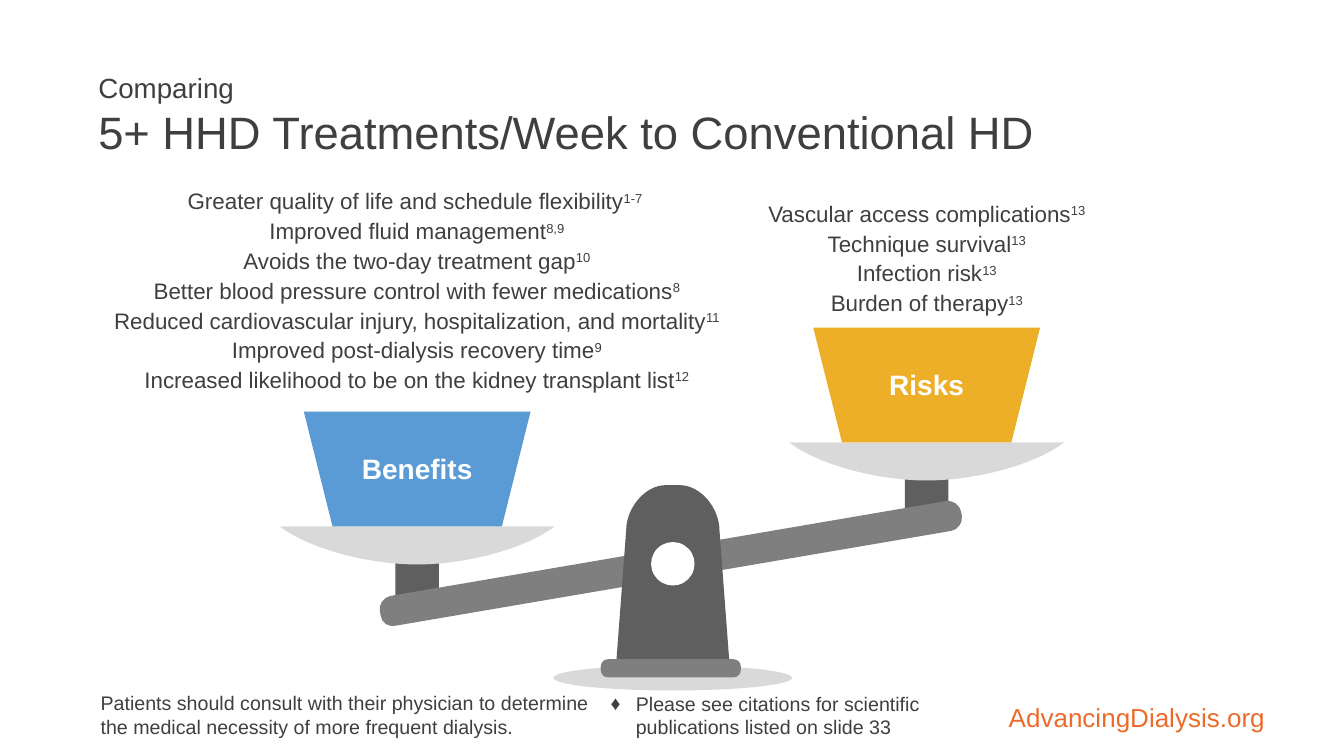
from lxml.etree import SubElement
from pptx import Presentation
from pptx.dml.color import RGBColor
from pptx.enum.shapes import MSO_SHAPE
from pptx.enum.text import MSO_ANCHOR, MSO_AUTO_SIZE, PP_ALIGN
from pptx.oxml.ns import qn
from pptx.util import Pt

COLORS = {"text": "3F3F3F", "white": "FFFFFF", "orange": "ED6B2A",
          "blue": "5B9BD5", "gold": "EDAE28", "dark": "5F5F5F",
          "beam": "7F7F7F", "pale": "D9D9D9"}


def add_part(color, outline, preset=None, shift=(0, 0)):
    """Add a flat shape: a preset in a box, or a path of line (2) and cubic (6) steps."""
    if preset is not None:
        part = shapes.add_shape(preset, *map(Pt, outline))
    else:
        points = [(Pt(step[i] + shift[0]), Pt(step[i + 1] + shift[1]))
                  for step in outline for i in range(0, len(step), 2)]
        builder = shapes.build_freeform(*points[0])
        builder.add_line_segments(points[1:])
        part = builder.convert_to_shape()
        segments = iter(list(part._element.iter(qn("a:lnTo"))))
        for step in outline[1:]:
            segment = next(segments)
            if len(step) == 6:
                segment.tag = qn("a:cubicBezTo")
                for _ in range(2):
                    extra = next(segments)
                    segment.append(extra[0])
                    extra.getparent().remove(extra)
    part.shadow.inherit = False
    part.fill.solid()
    part.fill.fore_color.rgb = RGBColor.from_string(COLORS[color])
    part.line.fill.background()
    return part


def write(shape, place, lines, size, color="text", align=PP_ALIGN.LEFT,
          anchor=MSO_ANCHOR.TOP, margins=(7.2, 3.6), spacing=1.0, after=0, bold=False):
    """Place a text holder and fill it; each line is a pair of text and superscript."""
    shape.left, shape.top, shape.width, shape.height = map(Pt, place)
    frame = shape.text_frame
    frame.word_wrap = True
    frame.auto_size = MSO_AUTO_SIZE.NONE
    frame.vertical_anchor = anchor
    frame.margin_left = frame.margin_right = Pt(margins[0])
    frame.margin_top = frame.margin_bottom = Pt(margins[1])
    for index, line in enumerate(lines):
        para = frame.add_paragraph() if index else frame.paragraphs[0]
        para.alignment = align
        para.line_spacing = spacing
        para.space_after = Pt(after)
        for raised, words in enumerate(line):
            span = para.add_run()
            span.text = words
            span.font.name = "Arial"
            span.font.size = Pt(size)
            span.font.bold = bold
            span.font.color.rgb = RGBColor.from_string(COLORS[color])
            if raised:
                span.font._element.set("baseline", "30000")


deck = Presentation()
deck.slide_width, deck.slide_height = Pt(960), Pt(540)
page = deck.slides.add_slide(deck.slide_layouts[5])
shapes = page.shapes

# Title: small lead-in above the main line
title = shapes.title
write(title, (65.2, 59, 829.4, 45.4), [["Comparing "]], 19.8,
      anchor=MSO_ANCHOR.MIDDLE, margins=(5, 2.9))
heading = title.text_frame.paragraphs[0]
heading.add_line_break()
span = heading.add_run()
span.text = "5+ HHD Treatments/Week to Conventional HD"
span.font.name = "Arial"
span.font.size = Pt(32.4)
span.font.color.rgb = RGBColor.from_string(COLORS["text"])

# Two pans: label, colour, centre x, rim y, list place, list lines
pans = [
    ("Benefits", "blue", 298, 376, (76.3, 104.6, 442.8, 176.4), [
        ("Greater quality of life and schedule flexibility", "1-7 "),
        ("Improved fluid management", "8,9"),
        ("Avoids the two-day treatment gap", "10"),
        ("Better blood pressure control with fewer medications", "8"),
        ("Reduced cardiovascular injury, hospitalization, and mortality", "11"),
        ("Improved post-dialysis recovery time", "9"),
        ("Increased likelihood to be on the kidney transplant list", "12")]),
    ("Risks", "gold", 661.9, 316, (529.9, 133.9, 264.2, 92.2), [
        ("Vascular access\u00a0complications", "13"),
        ("Technique survival", "13"),
        ("Infection risk", "13"),
        ("Burden of therapy", "13")]),
]
DISH = [(-98.2, 0), (-76.6, 16.5, -34, 27.2, 0, 27.2), (34, 27.2, 76.6, 16.5, 98.2, 0)]

for label, color, center, rim, place, lines in pans:
    write(shapes.add_textbox(0, 0, 0, 0), place, lines, 16, align=PP_ALIGN.CENTER,
          anchor=MSO_ANCHOR.BOTTOM, margins=(0, 0), spacing=0.9, after=4)
    add_part("dark", (center - 15.6, rim + 15.7, 31.2, 34.5), MSO_SHAPE.RECTANGLE)
    add_part("pale", DISH, shift=(center, rim))
    weight = add_part(color, (center - 81, rim - 82, 162, 82), MSO_SHAPE.TRAPEZOID)
    weight.rotation = 180

# Beam and stand
BEAM = [(277.9, 390.2), (680.4, 393.1),
        (685.4, 393.1, 689.8, 397.4, 689.8, 402.5), (689.8, 405.4),
        (689.8, 410.4, 685.4, 414.7, 680.4, 414.7), (277.9, 411.8),
        (272.2, 411.8, 268.6, 408.2, 268.6, 403.2), (268.6, 399.6),
        (268.6, 394.6, 272.9, 390.2, 277.9, 390.2)]
PILLAR = [(40.6, 475.9), (33.3, 378.7), (33.3, 363.6, 20.5, 346.5, 4.7, 346.5),
          (-4.7, 346.5), (-20.5, 346.5, -33.3, 363.6, -33.3, 378.7), (-40.6, 475.9)]
FOOT = [(434.2, 483.8), (431.3, 483.8, 429.1, 481.7, 429.1, 478.1), (429.1, 476.6),
        (429.1, 473, 431.3, 470.9, 434.2, 470.9), (523.8, 470.9),
        (527, 470.9, 529.2, 473, 529.2, 476.6), (529.2, 478.1),
        (529.2, 481.7, 527, 483.8, 523.8, 483.8)]
beam = add_part("beam", BEAM)
beam.rotation = -10.1
add_part("pale", (395.3, 475.2, 170.6, 18), MSO_SHAPE.OVAL)
add_part("dark", PILLAR, shift=(480.6, 0))
add_part("beam", FOOT)
add_part("white", (465.1, 387.2, 31, 31), MSO_SHAPE.OVAL)

for label, color, center, rim, place, lines in pans:
    write(shapes.add_textbox(0, 0, 0, 0), (center - 59, rim - 57.3, 118, 31.7),
          [[label]], 20, "white", PP_ALIGN.CENTER, MSO_ANCHOR.MIDDLE, bold=True)

# Footer
write(shapes.add_textbox(0, 0, 0, 0), (64.8, 490.3, 364.3, 41),
      [["Patients should consult with their physician to determine "
        "the medical necessity\u00a0of more frequent dialysis."]], 14)
citations = shapes.add_textbox(0, 0, 0, 0)
write(citations, (429.1, 490.3, 254.9, 41),
      [["Please see citations for scientific publications listed on slide 33"]], 14,
      anchor=MSO_ANCHOR.MIDDLE)
settings = citations.text_frame.paragraphs[0]._p.get_or_add_pPr()
settings.set("marL", str(Pt(18)))
settings.set("indent", str(-Pt(18)))
SubElement(settings, qn("a:buFont")).set("typeface", "Arial")
SubElement(settings, qn("a:buChar")).set("char", "♦")
write(shapes.add_textbox(0, 0, 0, 0), (585.2, 479.5, 326.2, 43.9),
      [["AdvancingDialysis.org"]], 18.6, "orange", PP_ALIGN.RIGHT, MSO_ANCHOR.BOTTOM,
      margins=(7.9, 0), spacing=0.9)

deck.save("out.pptx")
